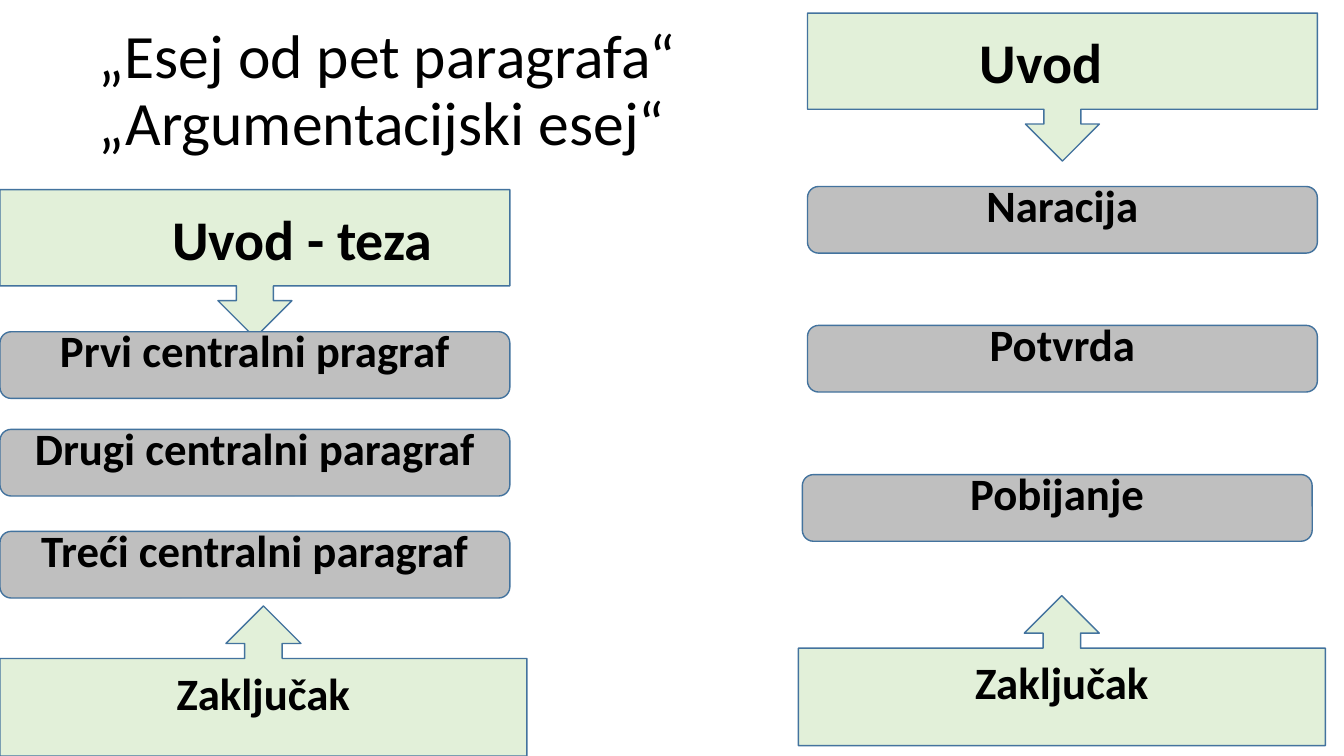
"""Build a slide comparing the five-paragraph essay with the argumentative essay."""
import pptx
import pptx.dml.color
import pptx.enum.shapes
import pptx.enum.text
import pptx.util

Cm, Pt = pptx.util.Cm, pptx.util.Pt
RGBColor = pptx.dml.color.RGBColor
SHAPE = pptx.enum.shapes.MSO_SHAPE
ALIGN = pptx.enum.text.PP_ALIGN
ANCHOR = pptx.enum.text.MSO_ANCHOR

BLACK = RGBColor(0x00, 0x00, 0x00)
GREEN = RGBColor(0xE2, 0xF0, 0xD9)
GREY = RGBColor(0xBF, 0xBF, 0xBF)
BLUE = RGBColor(0x43, 0x73, 0x9E)


class EssaySlide:
    font = "Calibri"

    def __init__(self, prs):
        self.slide = prs.slides.add_slide(prs.slide_layouts[5])

    def set_text(self, sp, text, size, bold, align):
        tf = sp.text_frame
        tf.word_wrap = True
        tf.vertical_anchor = ANCHOR.MIDDLE
        p = tf.paragraphs[0]
        p.text = text
        p.alignment = align
        p.font.name = self.font
        p.font.size = Pt(size)
        p.font.bold = bold
        p.font.color.rgb = BLACK
        return tf

    def title(self, text):
        sp = self.slide.shapes.title
        sp.left, sp.top, sp.width, sp.height = Cm(2.24), Cm(0.3), Cm(27.94), Cm(4.04)
        tf = self.set_text(sp, text, 44, False, ALIGN.LEFT)
        tf.auto_size = pptx.enum.text.MSO_AUTO_SIZE.NONE
        tf.paragraphs[0].line_spacing = 0.9

    def box(self, kind, fill, left, top, width, height):
        sp = self.slide.shapes.add_shape(kind, Cm(left), Cm(top), Cm(width), Cm(height))
        sp.shadow.inherit = False
        sp.fill.solid()
        sp.fill.fore_color.rgb = fill
        sp.line.color.rgb = BLUE
        sp.line.width = Pt(1)
        return sp

    def raised_text(self, sp, text):
        tf = self.set_text(sp, text, 32, True, ALIGN.CENTER)
        tf.margin_top, tf.margin_bottom = 0, Cm(0.76)

    def intro(self, text, left, top):
        sp = self.box(SHAPE.DOWN_ARROW_CALLOUT, GREEN, left, top, 12.85, 3.73)
        tf = self.set_text(sp, text, 40, True, ALIGN.LEFT)
        tf.margin_left = Cm(4.34)

    def paragraph(self, text, left, top):
        sp = self.box(SHAPE.ROUNDED_RECTANGLE, GREY, left, top, 12.85, 1.68)
        self.raised_text(sp, text)

    def conclusion(self, text, left, top):
        sp = self.box(SHAPE.UP_ARROW_CALLOUT, GREEN, left, top, 13.28, 3.78)
        self.raised_text(sp, text)


def main():
    prs = pptx.Presentation()
    prs.slide_width, prs.slide_height = Cm(33.87), Cm(19.05)
    essay = EssaySlide(prs)
    essay.title("„Esej od pet paragrafa“\v„Argumentacijski esej“")

    essay.intro("Uvod - teza", 0, 4.78)
    essay.intro("Uvod", 20.35, 0.33)
    for text, left, top in (
        ("Prvi centralni pragraf", 0, 8.36),
        ("Drugi centralni paragraf", 0, 10.82),
        ("Treći centralni paragraf", 0, 13.39),
        ("Naracija", 20.35, 4.7),
        ("Potvrda", 20.35, 8.2),
        ("Pobijanje", 20.22, 11.96),
    ):
        essay.paragraph(text, left, top)
    for left, top in ((0, 15.27), (20.12, 15.01)):
        essay.conclusion("Zaključak", left, top)

    prs.save("out.pptx")


if __name__ == "__main__":
    main()
